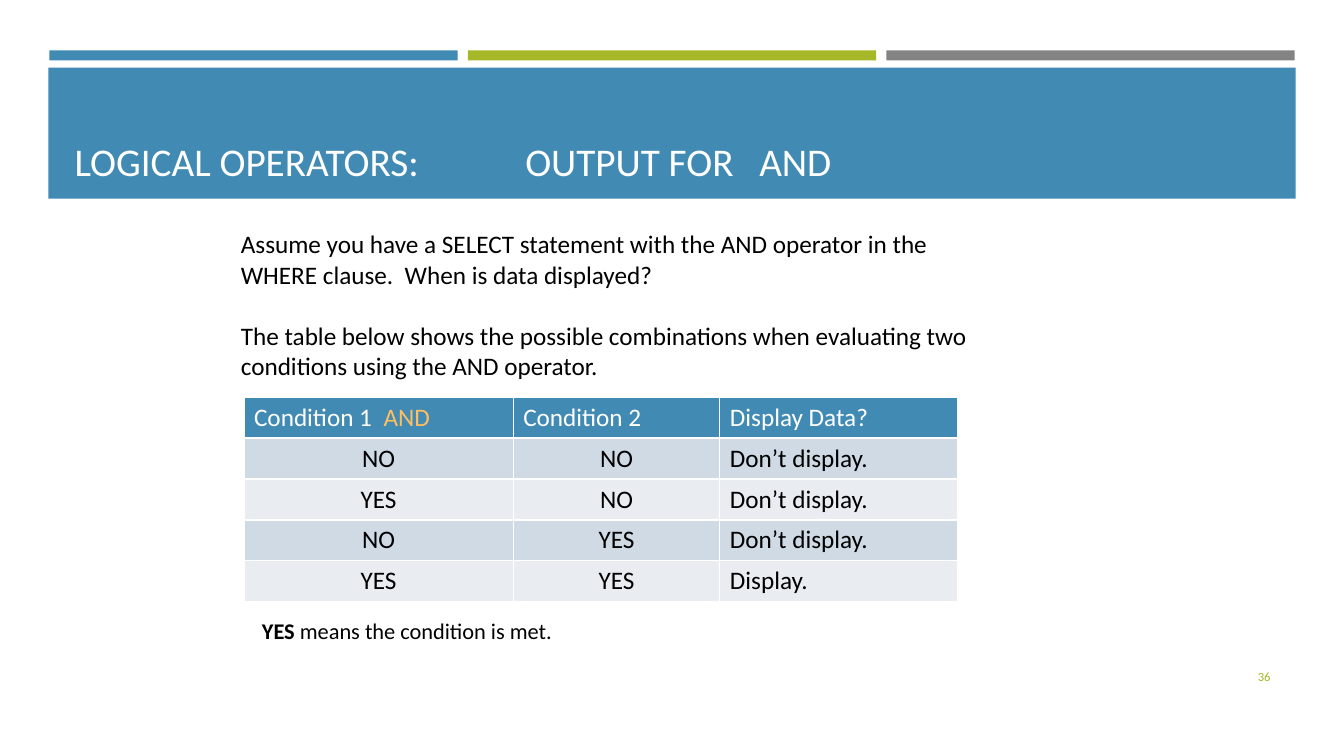
from dataclasses import dataclass

from lxml.etree import SubElement
from pptx import Presentation
from pptx.dml.color import RGBColor
from pptx.enum.shapes import MSO_SHAPE
from pptx.enum.text import MSO_ANCHOR, MSO_AUTO_SIZE, PP_ALIGN
from pptx.oxml.ns import qn
from pptx.util import Inches, Pt

FONT = "Calibri"
COLORS = {
    "blue": "418AB3",
    "green": "A6B727",
    "gray": "838383",
    "white": "FFFFFF",
    "black": "000000",
    "orange": "FFBF61",
    "band_dark": "CFDAE5",
    "band_light": "E9EDF2",
}


@dataclass
class Box:
    left: float
    top: float
    width: float
    height: float

    def lengths(self) -> tuple:
        return tuple(Inches(v) for v in (self.left, self.top, self.width, self.height))


@dataclass
class Bar:
    box: Box
    color: str


@dataclass
class Note:
    box: Box
    paragraphs: list[list[str]]  # runs of each paragraph
    size: float
    color: str = "black"
    align: PP_ALIGN = PP_ALIGN.LEFT
    anchor: MSO_ANCHOR = MSO_ANCHOR.TOP
    space_after: float = 0


BAR_WIDTH, BAR_STEP = 4.05, 4.15
BARS = [
    Bar(Box(0.49 + i * BAR_STEP, 0.5, BAR_WIDTH, 0.1), color)
    for i, color in enumerate(("blue", "green", "gray"))
] + [Bar(Box(0.48, 0.67, 12.37, 1.3), "blue")]

TITLE_BOX = Box(0.64, 0.77, 12.06, 1.11)
TITLE_TABS = (4.47, 6.79)

TABLE_BOX = Box(2.42, 3.94, 7.08, 2.03)
COLUMN_WIDTHS = (2.67, 2.05, 2.36)
ROWS = [
    ("Condition 1  ", "Condition 2", "Display Data?"),
    ("NO", "NO", "Don’t display."),
    ("YES", "NO", "Don’t display."),
    ("NO", "YES", "Don’t display."),
    ("YES", "YES", "Display."),
]

PAGE_NUMBER = Note(Box(11.55, 6.51, 1.15, 0.4), [["36"]], 9, "green",
                   PP_ALIGN.RIGHT, MSO_ANCHOR.MIDDLE)
INTRO = Note(
    Box(2.29, 2.22, 7.58, 1.62),
    [
        ["Assume you have a SELECT statement with the AND operator in the "
         "WHERE clause.  When is data displayed?"],
        ["The table below shows the possible combinations when evaluating two "
         "conditions using the AND operator."],
    ],
    18,
    space_after=22,
)
LEGEND = Note(Box(2.5, 6.07, 6.92, 0.37), [["YES", " means the condition is met."]], 16)


def rgb(name: str) -> RGBColor:
    return RGBColor.from_string(COLORS[name])


def style_paragraph(p, size: float, color: str, align=PP_ALIGN.LEFT) -> None:
    p.alignment = align
    p.font.name = FONT
    p.font.size = Pt(size)
    p.font.color.rgb = rgb(color)


def add_bar(slide, bar: Bar) -> None:
    sp = slide.shapes.add_shape(MSO_SHAPE.RECTANGLE, *bar.box.lengths())
    sp.shadow.inherit = False
    sp.fill.solid()
    sp.fill.fore_color.rgb = rgb(bar.color)
    sp.line.fill.background()


def place_title(slide, text: str) -> None:
    """Format the title and bring it in front of the blue band."""
    title = slide.shapes.title
    title.left, title.top, title.width, title.height = TITLE_BOX.lengths()
    tf = title.text_frame
    tf.text = text
    tf.auto_size = MSO_AUTO_SIZE.NONE
    tf.vertical_anchor = MSO_ANCHOR.BOTTOM
    p = tf.paragraphs[0]
    style_paragraph(p, 28, "white")
    tabs = SubElement(p._p.get_or_add_pPr(), qn("a:tabLst"))
    p._p.pPr.insert(0, tabs)
    for pos in TITLE_TABS:
        SubElement(tabs, qn("a:tab"), pos=str(Inches(pos)), algn="l")
    slide.shapes._spTree.append(title._element)


def add_note(slide, note: Note):
    sp = slide.shapes.add_textbox(*note.box.lengths())
    tf = sp.text_frame
    tf.word_wrap = True
    tf.vertical_anchor = note.anchor
    for i, runs in enumerate(note.paragraphs):
        p = tf.add_paragraph() if i else tf.paragraphs[0]
        style_paragraph(p, note.size, note.color, note.align)
        if i < len(note.paragraphs) - 1:
            p.space_after = Pt(note.space_after)
        for text in runs:
            p.add_run().text = text
    return sp


def add_truth_table(slide) -> None:
    table = slide.shapes.add_table(
        len(ROWS), len(COLUMN_WIDTHS), *TABLE_BOX.lengths()
    ).table
    for column, width in zip(table.columns, COLUMN_WIDTHS):
        column.width = Inches(width)
    for r, row in enumerate(ROWS):
        fill = "blue" if r == 0 else "band_dark" if r % 2 else "band_light"
        for c, text in enumerate(row):
            cell = table.cell(r, c)
            cell.fill.solid()
            cell.fill.fore_color.rgb = rgb(fill)
            cell.text = text
            p = cell.text_frame.paragraphs[0]
            centered = r > 0 and c < 2
            style_paragraph(p, 18, "black" if r else "white",
                            PP_ALIGN.CENTER if centered else PP_ALIGN.LEFT)
            p.font.bold = False
            for run in p.runs:
                run.font.bold = False
                run.font.color.rgb = rgb("black" if r else "white")
    operator = table.cell(0, 0).text_frame.paragraphs[0].add_run()
    operator.text = "AND"
    operator.font.bold = False
    operator.font.color.rgb = rgb("orange")


def main() -> None:
    prs = Presentation()
    prs.slide_width, prs.slide_height = Inches(13.33), Inches(7.5)
    slide = prs.slides.add_slide(prs.slide_layouts[5])
    for bar in BARS:
        add_bar(slide, bar)
    place_title(slide, "LOGICAL OPERATORS:\tOUTPUT FOR\tAND")
    add_note(slide, PAGE_NUMBER)
    add_truth_table(slide)
    add_note(slide, INTRO)
    legend = add_note(slide, LEGEND)
    legend.text_frame.paragraphs[0].runs[0].font.bold = True
    prs.save("out.pptx")


if __name__ == "__main__":
    main()
